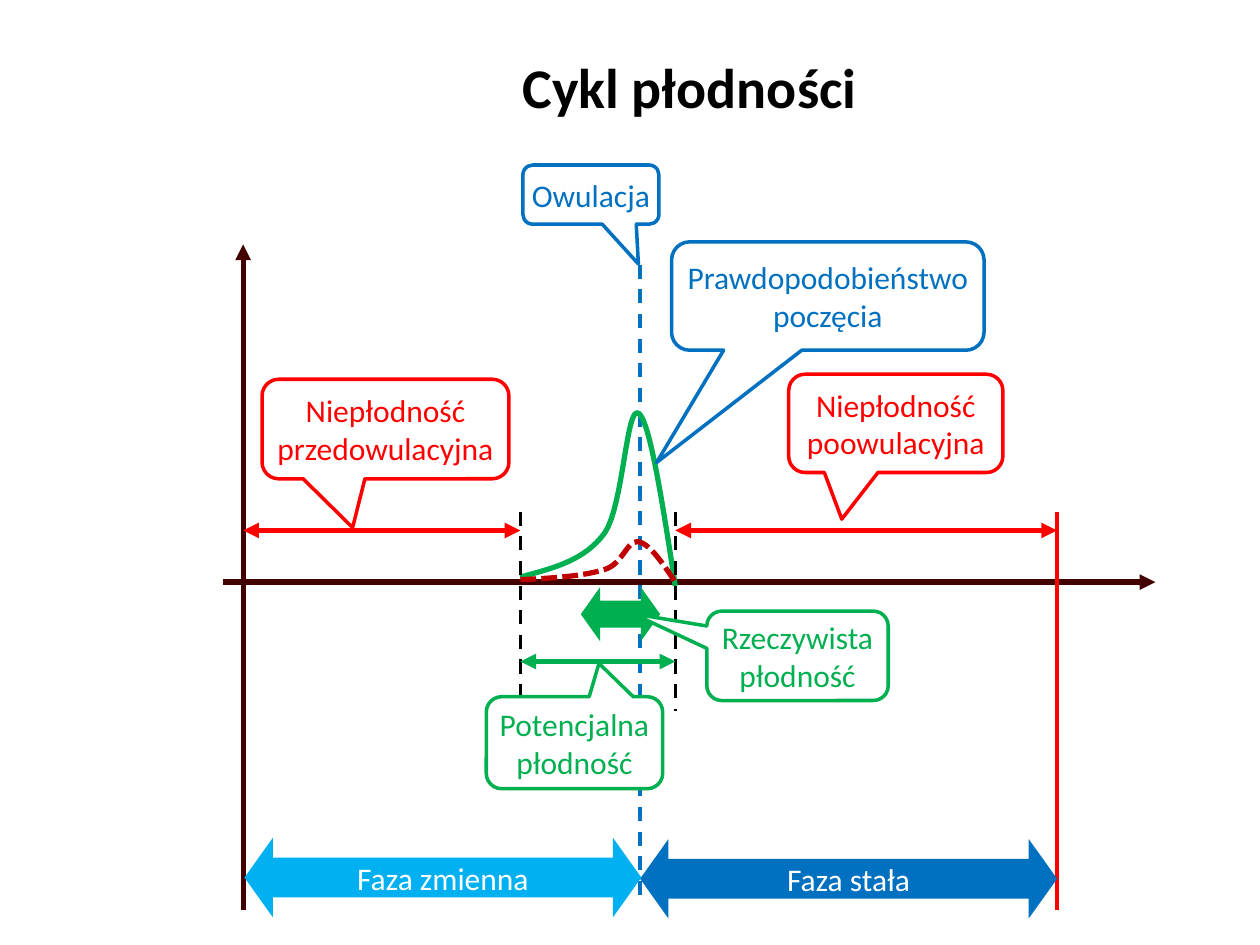
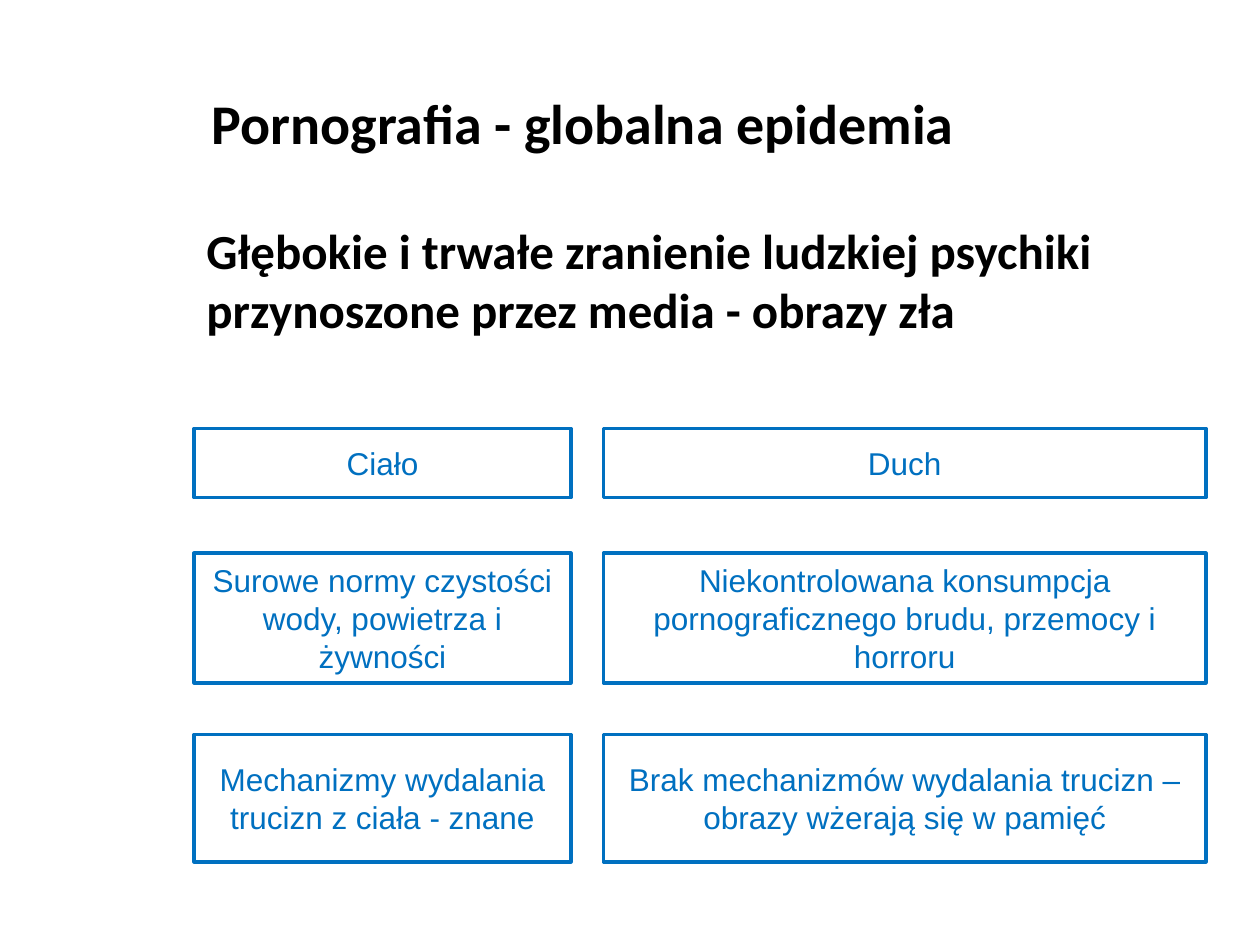
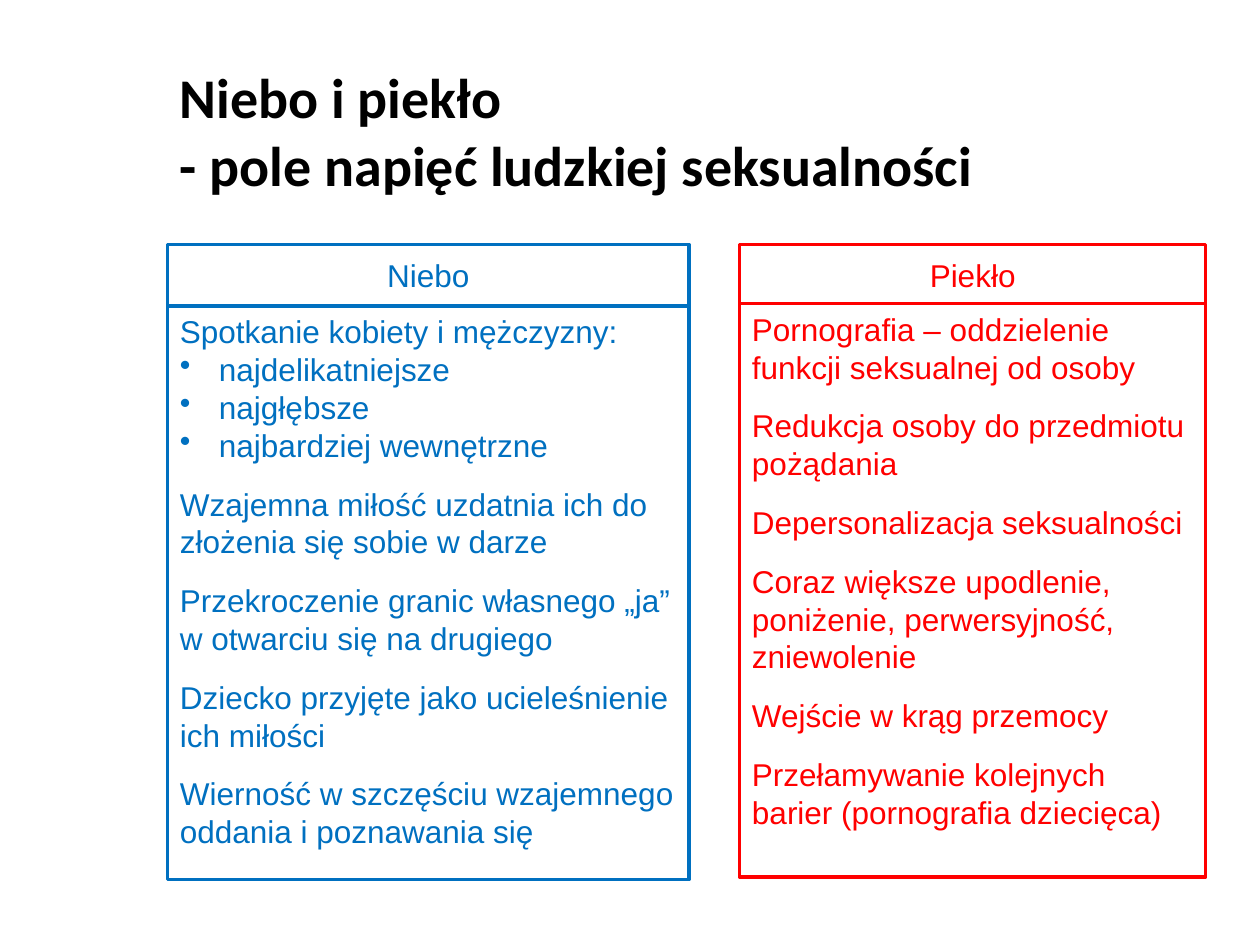
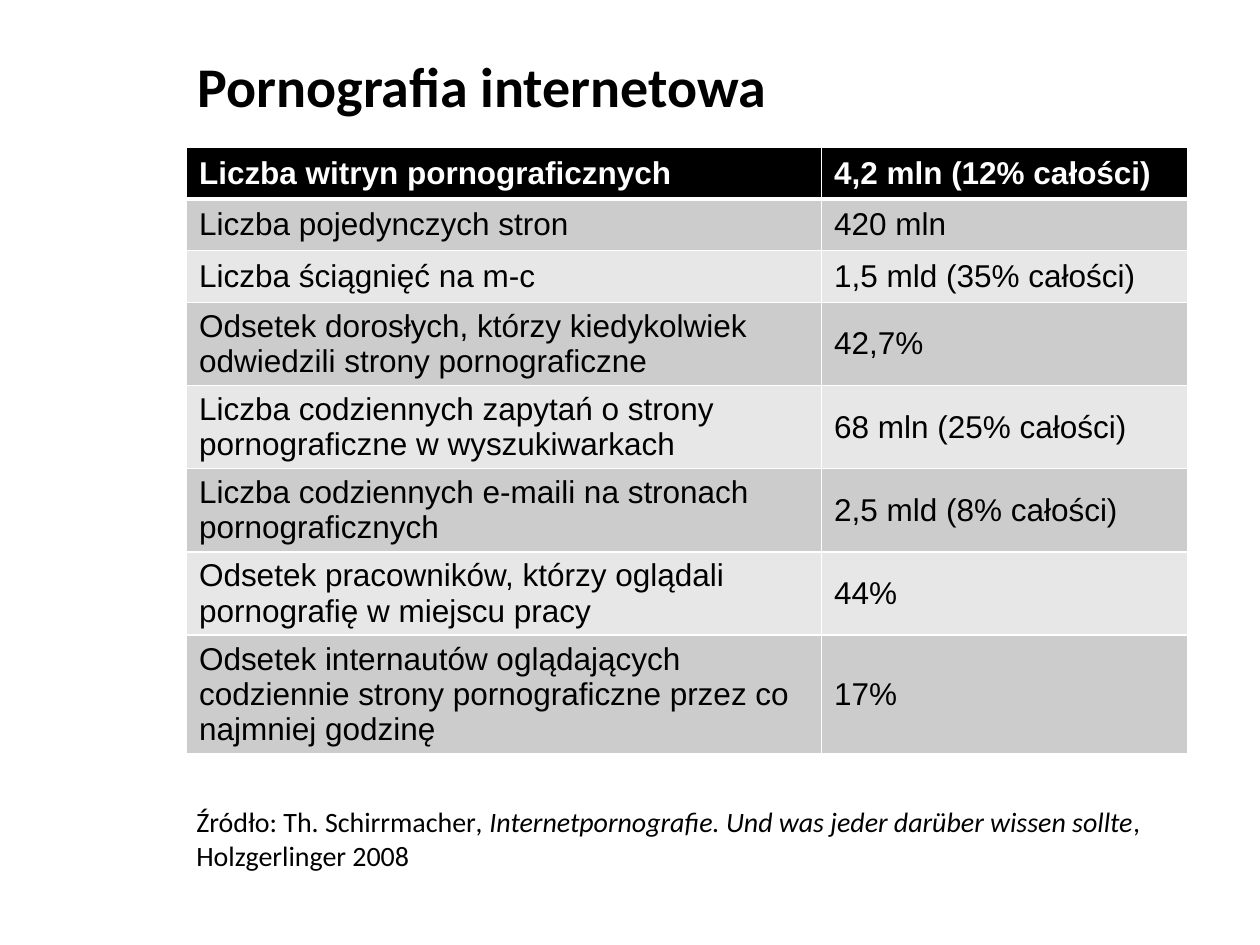
from dataclasses import dataclass

from lxml import etree
from pptx import Presentation
from pptx.dml.color import RGBColor
from pptx.enum.dml import MSO_LINE
from pptx.enum.shapes import MSO_CONNECTOR, MSO_SHAPE
from pptx.enum.text import MSO_ANCHOR, MSO_AUTO_SIZE, PP_ALIGN
from pptx.oxml.ns import qn
from pptx.util import Inches, Pt

RECT = MSO_SHAPE.RECTANGLE
BUBBLE = MSO_SHAPE.ROUNDED_RECTANGULAR_CALLOUT
ARROW = MSO_SHAPE.LEFT_RIGHT_ARROW
STRAIGHT = MSO_CONNECTOR.STRAIGHT
DASH, SHORT_DASH = MSO_LINE.DASH, MSO_LINE.SQUARE_DOT
LEFT, CENTER = PP_ALIGN.LEFT, PP_ALIGN.CENTER
TOP, MIDDLE = MSO_ANCHOR.TOP, MSO_ANCHOR.MIDDLE
GROW = MSO_AUTO_SIZE.SHAPE_TO_FIT_TEXT


@dataclass(frozen=True)
class Theme:
    black: str = "000000"
    white: str = "FFFFFF"
    blue: str = "0070C0"
    sky: str = "00B0F0"
    red: str = "FF0000"
    green: str = "00B050"
    crimson: str = "C00000"
    axis: str = "420000"
    bands: tuple = ("E7E7E7", "CCCCCC")
    head: str = "Calibri"
    body: str = "Arial"
    title: int = 32
    lead: int = 28
    text: int = 18
    note: int = 16
    thin: int = 2
    thick: int = 3
    gap: int = 12


T = Theme()


def rgb(code):
    return RGBColor.from_string(code)


def style(font, color, **values):
    font.color.rgb = rgb(color)
    for key, value in values.items():
        setattr(font, key, value)


def write(para, text, color, size=T.text, name=T.body, **more):
    """Add text to a paragraph; a newline becomes a line break."""
    for i, part in enumerate(text.split("\n")):
        if i:
            para.add_line_break()
        run = para.add_run()
        run.text = part
        style(run.font, color, size=Pt(size), name=name, **more)


def setup(frame, anchor=TOP, inset=None):
    frame.word_wrap = True
    frame.vertical_anchor = anchor
    if inset is not None:
        for side in ("left", "top", "right", "bottom"):
            setattr(frame, f"margin_{side}", Inches(inset))


def stroke(line, color, width, dash=None):
    line.color.rgb = rgb(color)
    line.width = Pt(width)
    if dash:
        line.dash_style = dash


def label(slide, place, text, size, align=LEFT, grow=False, **more):
    box = slide.shapes.add_textbox(*map(Inches, place))
    setup(box.text_frame)
    if grow:
        box.text_frame.auto_size = GROW
    para = box.text_frame.paragraphs[0]
    para.alignment = align
    write(para, text, T.black, size, T.head, **more)
    return para


def title(slide, place, text, align=LEFT):
    label(slide, place, text, T.title, align, bold=True)


def shape(slide, kind, place, fill=None, edge=None, adjust=()):
    item = slide.shapes.add_shape(kind, *map(Inches, place))
    item.shadow.inherit = False
    for i, value in enumerate(adjust):
        item.adjustments[i] = value
    if fill:
        item.fill.solid()
        item.fill.fore_color.rgb = rgb(fill)
    else:
        item.fill.background()
    if edge:
        stroke(item.line, edge, T.thin)
    else:
        item.line.fill.background()
    return item


def center(item, text, color, name, inset=None):
    setup(item.text_frame, MIDDLE, inset)
    para = item.text_frame.paragraphs[0]
    para.alignment = CENTER
    write(para, text, color, name=name)


def bubble(slide, place, tip, text, color, fill=None):
    item = shape(slide, BUBBLE, place, fill, color, (*tip, 0.167))
    center(item, text, color, T.head, 0.04)


def span(slide, place, fill, text=""):
    """Draw a block arrow that points both ways."""
    item = shape(slide, ARROW, place, fill, adjust=(0.5, 0.357))
    if text:
        center(item, text, T.white, T.head)


def panel(slide, place, text, color):
    item = shape(slide, RECT, place, T.white, color)
    center(item, text, color, T.body)


def bullet(para):
    props = para._p.get_or_add_pPr()
    props.set("marL", str(Inches(0.31)))
    props.set("indent", str(-Inches(0.31)))
    etree.SubElement(props, qn("a:buChar")).set("char", "•")


def essay(slide, place, rows, color):
    """Fill a framed box with rows of (text, has bullet, space after)."""
    item = shape(slide, RECT, place, T.white, color)
    frame = item.text_frame
    setup(frame)
    for i, (text, dot, after) in enumerate(rows):
        para = frame.add_paragraph() if i else frame.paragraphs[0]
        para.alignment = LEFT
        para.space_after = Pt(after)
        if dot:
            bullet(para)
        write(para, text, color)


def rule(slide, start, end, color, width, dash=None, ends=()):
    item = slide.shapes.add_connector(STRAIGHT, *map(Inches, (*start, *end)))
    stroke(item.line, color, width, dash)
    props = item._element.spPr
    for tag in ends:
        etree.SubElement(props.find(qn("a:ln")), qn(f"a:{tag}")).set("type", "triangle")
    etree.SubElement(props, qn("a:effectLst"))


def bezier(points, steps=16):
    """Return points along joined cubic curves."""
    track = [points[0]]
    for i in range(0, len(points) - 1, 3):
        quad = points[i:i + 4]
        for k in range(1, steps + 1):
            t = k / steps
            mix = ((1 - t) ** 3, 3 * t * (1 - t) ** 2, 3 * t * t * (1 - t), t ** 3)
            track.append(tuple(sum(m * p[d] for m, p in zip(mix, quad)) for d in (0, 1)))
    return track


def curve(slide, points, color, dash=None):
    first, *rest = [tuple(map(Inches, p)) for p in bezier(points)]
    build = slide.shapes.build_freeform(*first)
    build.add_line_segments(rest, close=False)
    item = build.convert_to_shape()
    item.shadow.inherit = False
    item.fill.background()
    stroke(item.line, color, T.thick, dash)


def border(cell, bottom):
    props = cell._tc.get_or_add_tcPr()
    widths = {"lnL": 1, "lnR": 1, "lnT": 1, "lnB": bottom}
    for i, (tag, width) in enumerate(widths.items()):
        line = etree.Element(qn(f"a:{tag}"), w=str(Pt(width)))
        fill = etree.SubElement(line, qn("a:solidFill"))
        etree.SubElement(fill, qn("a:srgbClr")).set("val", T.white)
        props.insert(i, line)


def grid(slide, place, widths, height, rows):
    size = (sum(widths), height * len(rows))
    item = slide.shapes.add_table(len(rows), len(widths), *map(Inches, (*place, *size)))
    table = item.table
    for col, width in zip(table.columns, widths):
        col.width = Inches(width)
    for r, row in enumerate(rows):
        top = r == 0
        for c, text in enumerate(row):
            cell = table.cell(r, c)
            cell.fill.solid()
            cell.fill.fore_color.rgb = rgb(T.black if top else T.bands[r % 2])
            cell.vertical_anchor = MIDDLE
            write(cell.text_frame.paragraphs[0], text,
                  T.white if top else T.black, bold=top)
            border(cell, 3 if top else 1)


def cycle(slide):
    tail, both = ("tailEnd",), ("headEnd", "tailEnd")
    start, peak, stop, last = 4.13, 5.08, 5.36, 8.39
    rule(slide, (1.77, 4.62), (9.17, 4.62), T.axis, T.thick, ends=tail)
    rule(slide, (1.93, 7.22), (1.93, 1.94), T.axis, T.thick, ends=tail)
    rule(slide, (last, 4.06), (last, 7.22), T.red, T.thin)
    rule(slide, (peak, 2.1), (peak, 7.14), T.blue, T.thin, DASH)

    curve(slide, [(start, 4.58), (4.39, 4.51), (4.64, 4.45), (4.8, 4.23),
                  (4.95, 4.01), (4.97, 3.21), (5.07, 3.28),
                  (5.16, 3.35), (5.26, 4), (stop, 4.65)], T.green)
    curve(slide, [(start, 4.6), (4.39, 4.59), (4.64, 4.57), (4.8, 4.52),
                  (4.95, 4.47), (4.97, 4.29), (5.07, 4.3),
                  (5.16, 4.32), (5.26, 4.47), (stop, 4.62)], T.crimson, SHORT_DASH)
    for x in (start, stop):
        rule(slide, (x, 4.06), (x, 5.64), T.black, T.thin, DASH)

    for place, tip, text, color in (
        ((4.15, 1.31, 1.08, 0.47), (0.349, 1.171), "Owulacja", T.blue),
        ((5.33, 1.92, 2.48, 0.86), (-0.548, 1.537), "Prawdopodobieństwo poczęcia", T.blue),
        ((6.26, 2.97, 1.7, 0.78), (-0.252, 0.975), "Niepłodność poowulacyjna", T.red),
        ((2.08, 3.01, 1.96, 0.79), (-0.133, 0.99), "Niepłodność przedowulacyjna", T.red),
    ):
        bubble(slide, place, tip, text, color)

    bubble(slide, (3.86, 5.53, 1.4, 0.73), (0.139, -0.862),
           "Potencjalna płodność", T.green, T.white)
    span(slide, (4.61, 4.66, 0.63, 0.43), T.green)
    rule(slide, (start, 5.25), (stop, 5.25), T.green, T.thick, ends=both)
    bubble(slide, (5.61, 4.85, 1.44, 0.71), (-0.906, -0.47),
           "Rzeczywista płodność", T.green, T.white)
    for left, right in ((1.93, start), (stop, last)):
        rule(slide, (left, 4.21), (right, 4.21), T.red, T.thick, ends=both)
    span(slide, (peak, 6.66, 3.31, 0.63), T.blue, "Faza stała")
    span(slide, (1.94, 6.65, 3.15, 0.63), T.sky, "Faza zmienna")
    title(slide, (1.58, 0.37, 7.79, 0.62), "Cykl płodności", CENTER)


def plague(slide):
    label(slide, (1.54, 1.7, 8.03, 1.04),
          "Głębokie i trwałe zranienie ludzkiej psychiki "
          "przynoszone przez media - obrazy zła", T.lead, grow=True, bold=True)
    cols = ((1.54, 2.99), (4.79, 4.78))
    rows = (
        (3.4, 0.55, "Ciało", "Duch"),
        (4.39, 1.03, "Surowe normy czystości wody, powietrza i żywności",
         "Niekontrolowana konsumpcja pornograficznego brudu, przemocy i horroru"),
        (5.83, 1.01, "Mechanizmy wydalania trucizn z ciała - znane",
         "Brak mechanizmów wydalania trucizn –obrazy wżerają się w pamięć"),
    )
    for top, height, *texts in rows:
        for (left, width), text in zip(cols, texts):
            panel(slide, (left, top, width, height), text, T.blue)
    title(slide, (1.58, 0.65, 6.6, 0.65), "Pornografia - globalna epidemia")


def poles(slide):
    heaven = [
        ("Spotkanie kobiety i mężczyzny:", False, 0),
        ("najdelikatniejsze", True, 0),
        ("najgłębsze", True, 0),
        ("najbardziej wewnętrzne", True, T.gap),
    ] + [(text, False, T.gap) for text in (
        "Wzajemna miłość uzdatnia ich do złożenia się sobie w darze",
        "Przekroczenie granic własnego „ja” w otwarciu się na drugiego",
        "Dziecko przyjęte jako ucieleśnienie ich miłości",
        "Wierność w szczęściu wzajemnego oddania i poznawania się",
    )]
    hell = [(text, False, T.gap) for text in (
        "Pornografia – oddzielenie funkcji seksualnej od osoby",
        "Redukcja osoby do przedmiotu pożądania",
        "Depersonalizacja seksualności",
        "Coraz większe upodlenie, poniżenie, perwersyjność, zniewolenie",
        "Wejście w krąg przemocy",
        "Przełamywanie kolejnych barier (pornografia dziecięca)",
    )]
    for left, width, top, name, rows, color in (
        (1.33, 4.14, 2.43, "Niebo", heaven, T.blue),
        (5.87, 3.7, 2.41, "Piekło", hell, T.red),
    ):
        panel(slide, (left, 1.94, width, 0.49), name, color)
        essay(slide, (left, top, width, 4.55), rows, color)
    title(slide, (1.33, 0.45, 8.23, 1.13),
          "Niebo i piekło\n- pole napięć ludzkiej seksualności")


def stats(slide):
    grid(slide, (1.48, 1.17), (5.04, 2.91), 0.41, (
        ("Liczba witryn pornograficznych", "4,2 mln (12% całości)"),
        ("Liczba pojedynczych stron", "420 mln"),
        ("Liczba ściągnięć na m-c", "1,5 mld (35% całości)"),
        ("Odsetek dorosłych, którzy kiedykolwiek odwiedzili strony pornograficzne", "42,7%"),
        ("Liczba codziennych zapytań o strony pornograficzne w wyszukiwarkach",
         "68 mln (25% całości)"),
        ("Liczba codziennych e-maili na stronach pornograficznych", "2,5 mld (8% całości)"),
        ("Odsetek pracowników, którzy oglądali pornografię w miejscu pracy", "44%"),
        ("Odsetek internautów oglądających codziennie strony pornograficzne "
         "przez co najmniej godzinę", "17%"),
    ))
    para = label(slide, (1.46, 6.34, 7.95, 0.64), "Źródło: Th. Schirrmacher",
                 T.note, grow=True)
    write(para, ", Internetpornografie. Und was jeder darüber wissen sollte",
          T.black, T.note, T.head, italic=True)
    write(para, ", Holzgerlinger 2008", T.black, T.note, T.head)
    title(slide, (1.47, 0.36, 7.94, 0.79), "Pornografia internetowa")


def main():
    deck = Presentation()
    deck.slide_width, deck.slide_height = Inches(10), Inches(7.5)
    blank = deck.slide_layouts[6]
    for draw in (cycle, plague, poles, stats):
        draw(deck.slides.add_slide(blank))
    deck.save("out.pptx")


if __name__ == "__main__":
    main()
